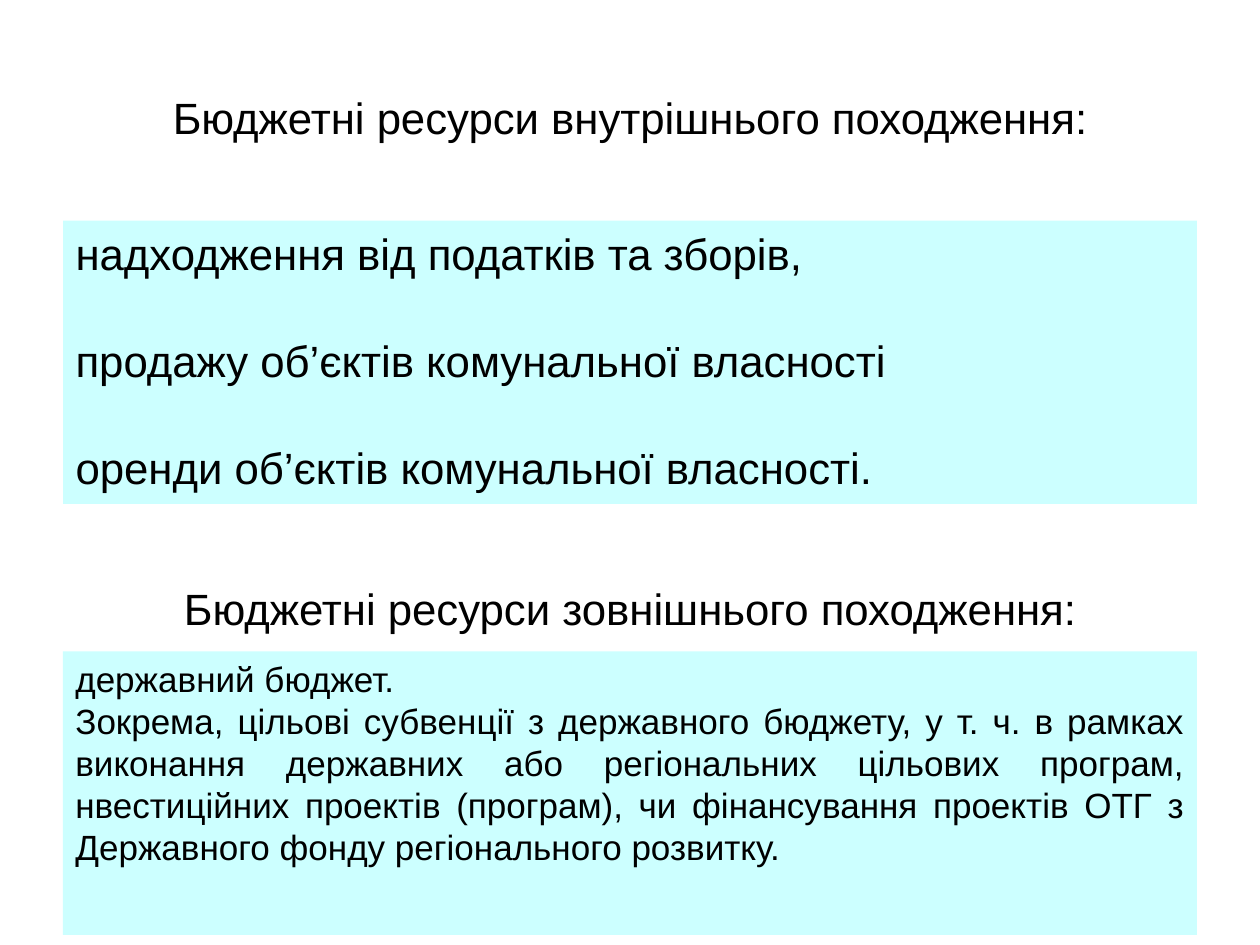
"""Build a slide on internal and external budget resources."""
import lxml.etree
import pptx
import pptx.dml.color
import pptx.enum.text
import pptx.oxml.ns
import pptx.util

Pt = pptx.util.Pt
Inches = pptx.util.Inches
ALIGN = pptx.enum.text.PP_ALIGN
ANCHOR = pptx.enum.text.MSO_ANCHOR
BLACK = pptx.dml.color.RGBColor(0x00, 0x00, 0x00)
PALE_CYAN = pptx.dml.color.RGBColor(0xCC, 0xFF, 0xFF)

INTERNAL_HEADING = "Бюджетні ресурси внутрішнього походження:"
INTERNAL_SOURCES = [
    "надходження від податків та зборів,",
    "продажу об’єктів комунальної власності",
    "оренди об’єктів комунальної власності.",
]
EXTERNAL_HEADING = "Бюджетні ресурси зовнішнього походження:"
EXTERNAL_SOURCES = [
    "державний бюджет.",
    "Зокрема, цільові субвенції з державного бюджету, у т. ч. в рамках "
    "виконання державних або регіональних цільових програм, нвестиційних "
    "проектів (програм), чи фінансування проектів ОТГ з Державного фонду "
    "регіонального розвитку.",
]

SLIDE_WIDTH, SLIDE_HEIGHT = 10, 7.5
MARGIN = SLIDE_WIDTH * 0.05
CONTENT_WIDTH = SLIDE_WIDTH - 2 * MARGIN
HEADING_HEIGHT, PANEL_HEIGHT = 1.25, 2.25
HEADING = dict(size=25, anchor=ANCHOR.MIDDLE, aligns=[ALIGN.CENTER])
INTERNAL = dict(size=25, anchor=ANCHOR.TOP, aligns=[ALIGN.LEFT] * 3, gap=31, fill=PALE_CYAN)
EXTERNAL = dict(size=20, anchor=ANCHOR.TOP, aligns=[ALIGN.LEFT, ALIGN.JUSTIFY], fill=PALE_CYAN)


def set_attributes(target, values):
    for name, value in values.items():
        setattr(target, name, value)


def write_block(block, top, height, lines, size, anchor, aligns, gap=0, fill=None):
    set_attributes(block, dict(
        left=Inches(MARGIN), top=Inches(top),
        width=Inches(CONTENT_WIDTH), height=Inches(height)))
    if fill is not None:
        block.fill.solid()
        block.fill.fore_color.rgb = fill
    frame = block.text_frame
    frame.text = "\n".join(lines)
    set_attributes(frame, dict(
        word_wrap=True, auto_size=pptx.enum.text.MSO_AUTO_SIZE.NONE, vertical_anchor=anchor,
        margin_left=Inches(0.1), margin_right=Inches(0.1),
        margin_top=Inches(0.05), margin_bottom=Inches(0.05)))
    for index, (paragraph, align) in enumerate(zip(frame.paragraphs, aligns)):
        properties = paragraph._p.get_or_add_pPr()
        properties.set("marL", "0")
        properties.set("indent", "0")
        lxml.etree.SubElement(properties, pptx.oxml.ns.qn("a:buNone"))
        set_attributes(paragraph, dict(
            alignment=align, space_before=Pt(gap if index else 0), space_after=Pt(0)))
        for run in paragraph.runs:
            set_attributes(run.font, dict(name="Arial", size=Pt(size)))
            run.font.color.rgb = BLACK


def main():
    deck = pptx.Presentation()
    set_attributes(deck, dict(
        slide_width=Inches(SLIDE_WIDTH), slide_height=Inches(SLIDE_HEIGHT)))
    slide = deck.slides.add_slide(deck.slide_layouts[1])
    title, body = slide.placeholders
    external_heading, external_panel = (
        slide.shapes.add_textbox(0, 0, 0, 0) for _ in range(2))
    write_block(title, 0.3, HEADING_HEIGHT, [INTERNAL_HEADING], **HEADING)
    write_block(body, 1.75, PANEL_HEIGHT, INTERNAL_SOURCES, **INTERNAL)
    write_block(external_heading, 4.2, HEADING_HEIGHT, [EXTERNAL_HEADING], **HEADING)
    write_block(external_panel, 5.17, PANEL_HEIGHT, EXTERNAL_SOURCES, **EXTERNAL)
    deck.save("out.pptx")


if __name__ == "__main__":
    main()
